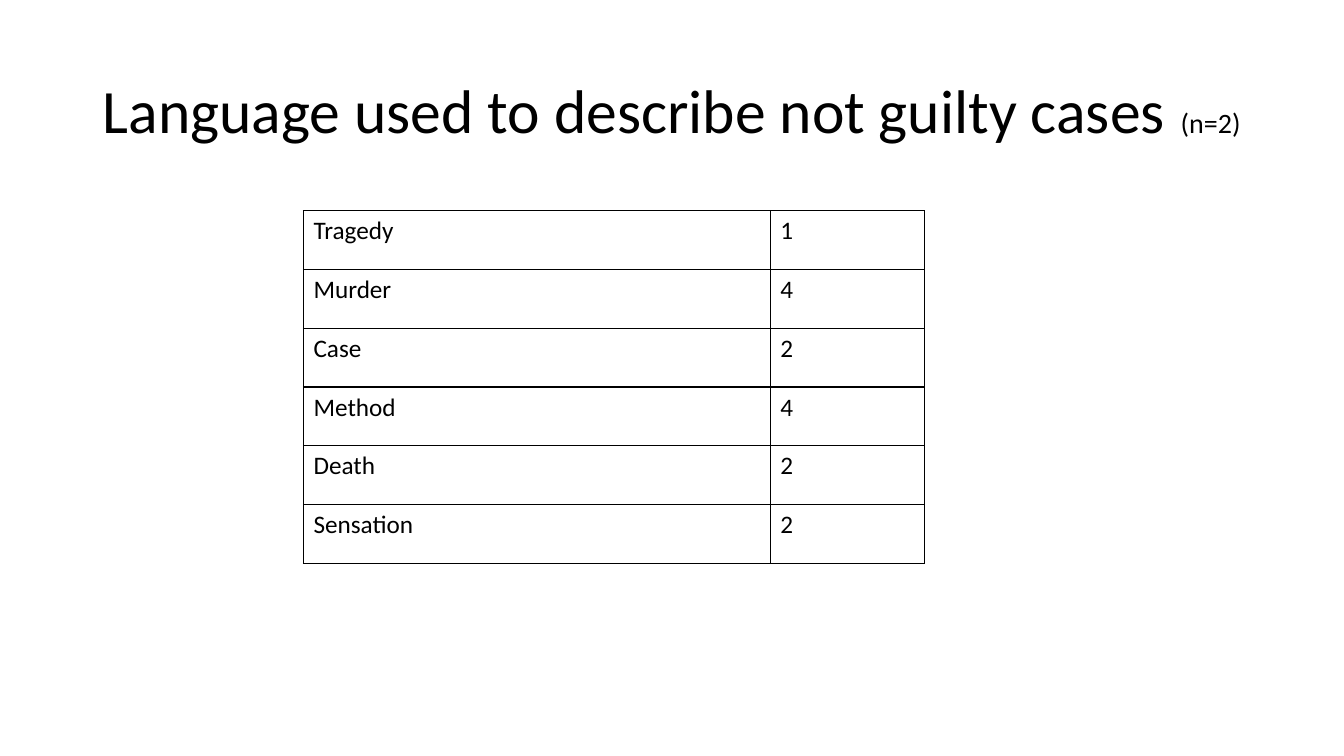
import pptx
import pptx.dml.color
import pptx.enum.text
import pptx.oxml
import pptx.oxml.ns
import pptx.util
from pptx.util import Inches


def colour(value):
    return pptx.dml.color.RGBColor.from_string(value)


class SlideBuilder:
    font = "Calibri"
    ink = "000000"
    paper = "FFFFFF"

    def __init__(self, deck):
        self.page = deck.slides.add_slide(deck.slide_layouts[5])

    def style(self, span, size):
        span.font.name = self.font
        span.font.size = pptx.util.Pt(size)
        span.font.bold = False
        span.font.color.rgb = colour(self.ink)

    def title(self, parts, left, top, width, height):
        box = self.page.shapes.title
        box.left, box.top = Inches(left), Inches(top)
        box.width, box.height = Inches(width), Inches(height)
        frame = box.text_frame
        frame.word_wrap = True
        frame.auto_size = pptx.enum.text.MSO_AUTO_SIZE.NONE
        frame.vertical_anchor = pptx.enum.text.MSO_ANCHOR.MIDDLE
        para = frame.paragraphs[0]
        para.alignment = pptx.enum.text.PP_ALIGN.LEFT
        para.line_spacing = 0.9
        for text, size in parts:
            span = para.add_run()
            span.text = text
            self.style(span, size)

    def borders(self, cell, width):
        properties = cell._tc.get_or_add_tcPr()
        for index, side in enumerate(("lnL", "lnR", "lnT", "lnB")):
            line = pptx.oxml.parse_xml(
                f'<a:{side} {pptx.oxml.ns.nsdecls("a")} w="{pptx.util.Pt(width)}">'
                f'<a:solidFill><a:srgbClr val="{self.ink}"/></a:solidFill></a:{side}>'
            )
            properties.insert(index, line)

    def table(self, rows, left, top, widths, row_height, size):
        frame = self.page.shapes.add_table(
            len(rows), len(widths), Inches(left), Inches(top),
            Inches(sum(widths)), Inches(row_height * len(rows)),
        )
        table = frame.table
        table.first_row = False
        table.horz_banding = False
        for column, width in zip(table.columns, widths):
            column.width = Inches(width)
        for row, values in zip(table.rows, rows):
            row.height = Inches(row_height)
            for cell, value in zip(row.cells, values):
                cell.text_frame.text = str(value)
                self.style(cell.text_frame.paragraphs[0].runs[0], size)
                cell.fill.solid()
                cell.fill.fore_color.rgb = colour(self.paper)
                self.borders(cell, 1)


def main():
    deck = pptx.Presentation()
    deck.slide_width, deck.slide_height = Inches(13.33), Inches(7.5)
    builder = SlideBuilder(deck)
    builder.title(
        [("Language used to describe not guilty cases ", 44), ("(n=2)", 20)],
        0.92, 0.4, 11.5, 1.45,
    )
    word_counts = [
        ("Tragedy", 1),
        ("Murder", 4),
        ("Case", 2),
        ("Method", 4),
        ("Death", 2),
        ("Sensation", 2),
    ]
    builder.table(word_counts, 3.01, 2.09, (4.63, 1.53), 3.5 / len(word_counts), 18)
    deck.save("out.pptx")


if __name__ == "__main__":
    main()
